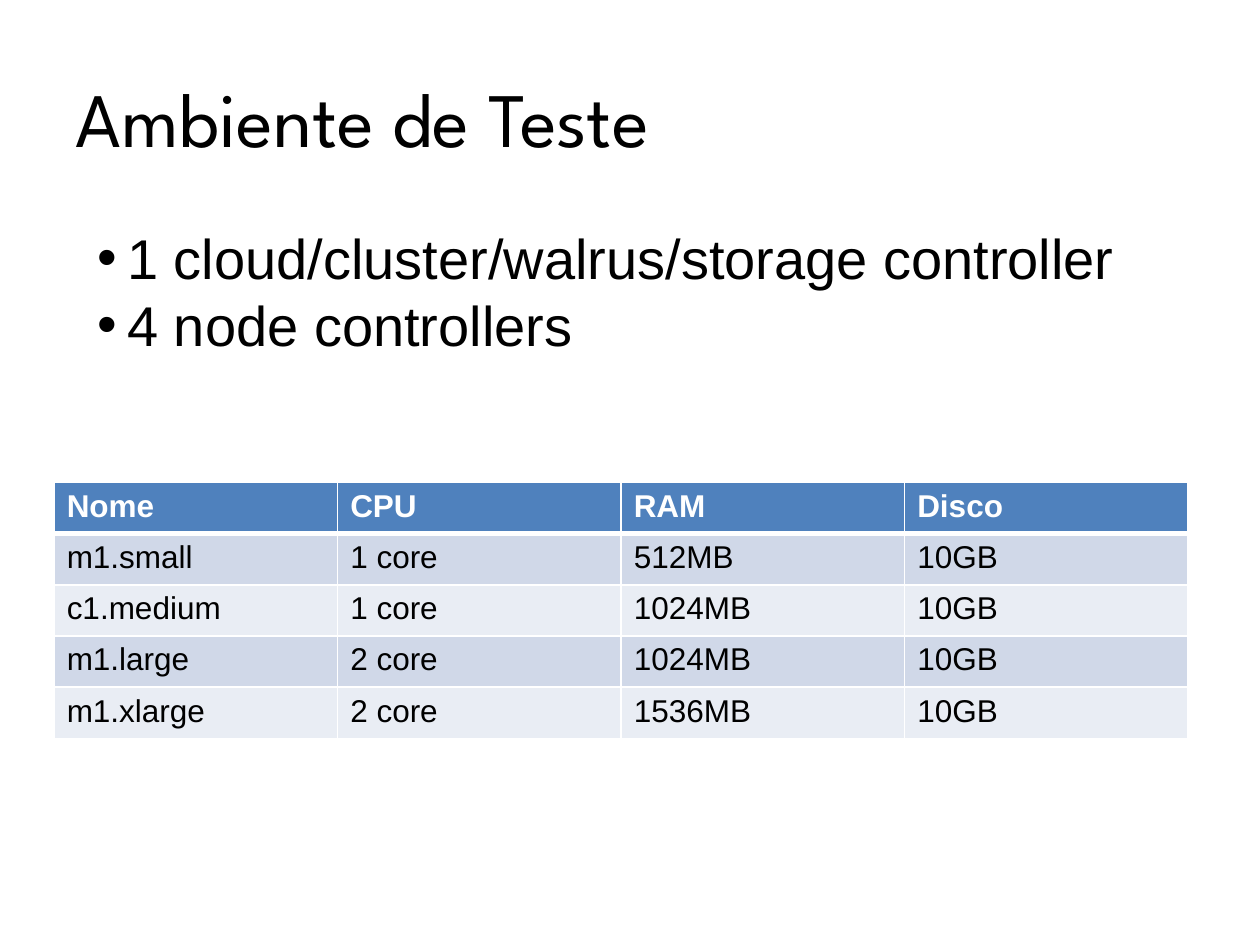
from dataclasses import dataclass

from lxml.etree import SubElement as Sub
from pptx import Presentation as Deck
from pptx.dml.color import RGBColor as Rgb
from pptx.enum.text import MSO_ANCHOR as Anchor, MSO_AUTO_SIZE as Fit, PP_ALIGN as Align
from pptx.oxml.ns import qn
from pptx.util import Inches, Pt

INK = {
    "text": "000000",
    "white": "FFFFFF",
    "head": "4F81BD",
    "odd": "D0D8E8",
    "even": "E9EDF4",
}


@dataclass
class Box:
    left: float
    top: float
    width: float
    height: float

    def spans(self) -> tuple:
        return tuple(Inches(n) for n in (self.left, self.top, self.width, self.height))


@dataclass
class Style:
    face: str
    size: float
    ink: str = "text"
    bold: bool = False


@dataclass
class Row:
    cells: tuple
    fill: str
    style: Style
    base: float = 1


HEAD = Style("Arial", 18, "white", True)
CELL = Style("Arial", 18)
ROWS = [
    Row(("Nome", "CPU", "RAM", "Disco"), "head", HEAD, 3),
    Row(("m1.small", "1 core", "512MB", "10GB"), "odd", CELL),
    Row(("c1.medium", "1 core", "1024MB", "10GB"), "even", CELL),
    Row(("m1.large", "2 core", "1024MB", "10GB"), "odd", CELL),
    Row(("m1.xlarge", "2 core", "1536MB", "10GB"), "even", CELL),
]
ITEMS = ["1 cloud/cluster/walrus/storage controller", "4 node controllers"]


def write(para, text: str, style: Style) -> None:
    run = para.add_run()
    run.text = text
    run.font.name = style.face
    run.font.size = Pt(style.size)
    run.font.bold = style.bold
    run.font.color.rgb = Rgb.from_string(INK[style.ink])


def place(shape, box: Box) -> None:
    shape.left, shape.top, shape.width, shape.height = box.spans()


def bullet(para, indent: float) -> None:
    props = para._p.get_or_add_pPr()
    props.set("marL", str(Inches(indent)))
    props.set("indent", str(-Inches(indent)))
    Sub(props, qn("a:buFont"), typeface="Arial")
    Sub(props, qn("a:buChar"), char="•")


def edge(cell, side: str, width: float) -> None:
    line = Sub(cell._tc.get_or_add_tcPr(), qn(f"a:{side}"), w=str(Pt(width)))
    fill = Sub(line, qn("a:solidFill"))
    Sub(fill, qn("a:srgbClr"), val=INK["white"])


def draw_title(shape, text: str) -> None:
    place(shape, Box(0.5, 0.3, 9, 1.25))
    frame = shape.text_frame
    frame.auto_size = Fit.NONE
    frame.vertical_anchor = Anchor.MIDDLE
    para = frame.paragraphs[0]
    para.alignment = Align.LEFT
    write(para, text, Style("League Spartan", 44))


def draw_list(shape, items: list) -> None:
    place(shape, Box(0.67, 1.7, 8.66, 1.18))
    frame = shape.text_frame
    frame.auto_size = Fit.NONE
    frame.margin_top = Inches(0.07)
    for i, item in enumerate(items):
        para = frame.add_paragraph() if i else frame.paragraphs[0]
        bullet(para, 0.24)
        para.space_before = Pt(0)
        para.line_spacing = Pt(38.4)
        write(para, item, Style("Arial", 32))


def draw_table(slide, rows: list) -> None:
    box = Box(0.43, 3.83, 9, 2.03)
    grid = slide.shapes.add_table(len(rows), len(rows[0].cells), *box.spans()).table
    for r, row in enumerate(rows):
        for c, text in enumerate(row.cells):
            cell = grid.cell(r, c)
            top = rows[r - 1].base if r else 1
            for side, width in (("lnL", 1), ("lnR", 1), ("lnT", top), ("lnB", row.base)):
                edge(cell, side, width)
            cell.fill.solid()
            cell.fill.fore_color.rgb = Rgb.from_string(INK[row.fill])
            write(cell.text_frame.paragraphs[0], text, row.style)


def main() -> None:
    deck = Deck()
    deck.slide_width, deck.slide_height = Inches(10), Inches(7.5)
    slide = deck.slides.add_slide(deck.slide_layouts[1])
    draw_title(slide.shapes.title, "Ambiente de Teste")
    draw_table(slide, ROWS)
    draw_list(slide.placeholders[1], ITEMS)
    deck.save("out.pptx")


if __name__ == "__main__":
    main()
